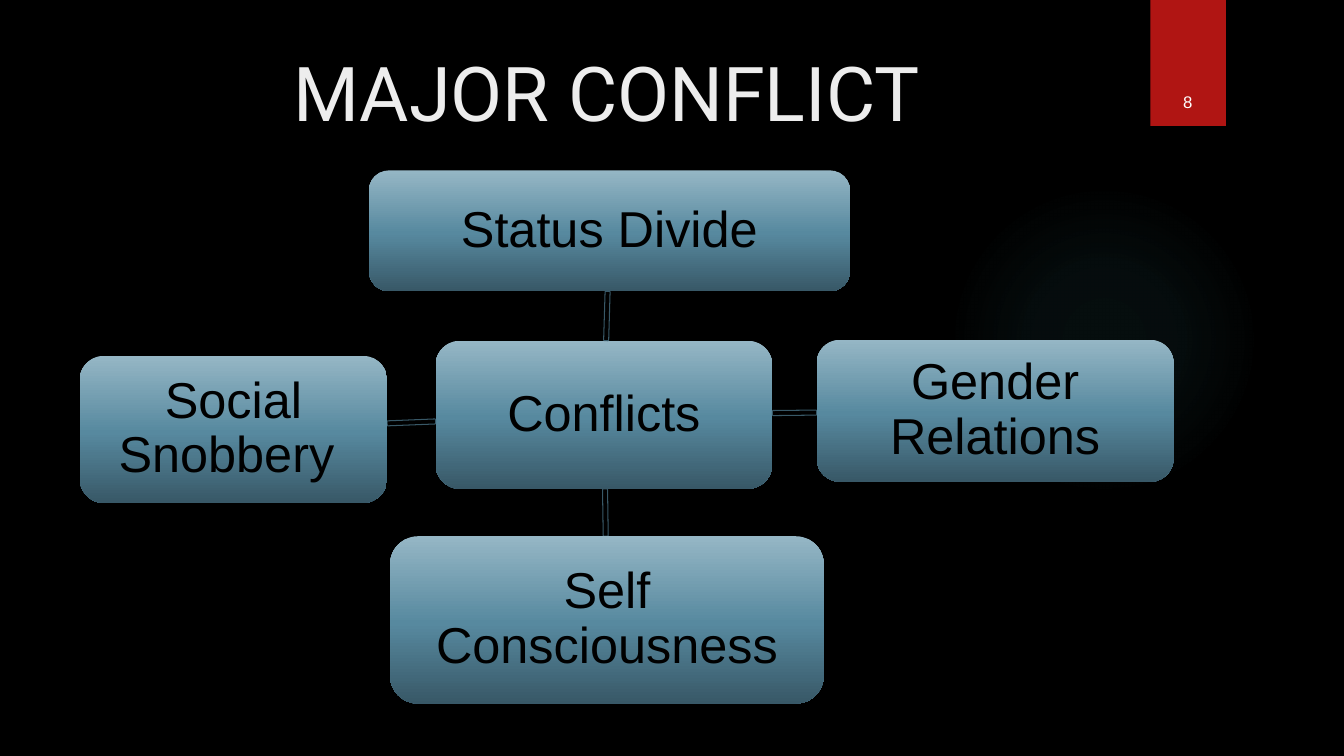
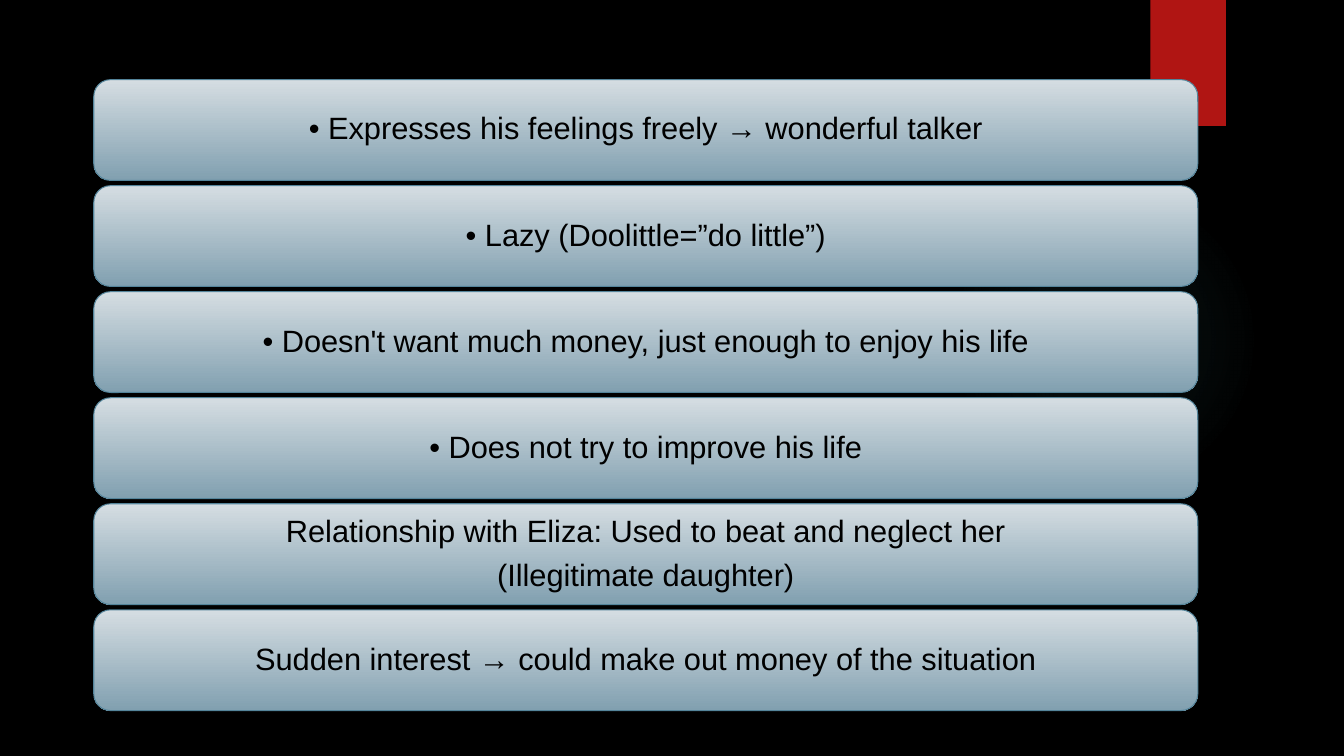
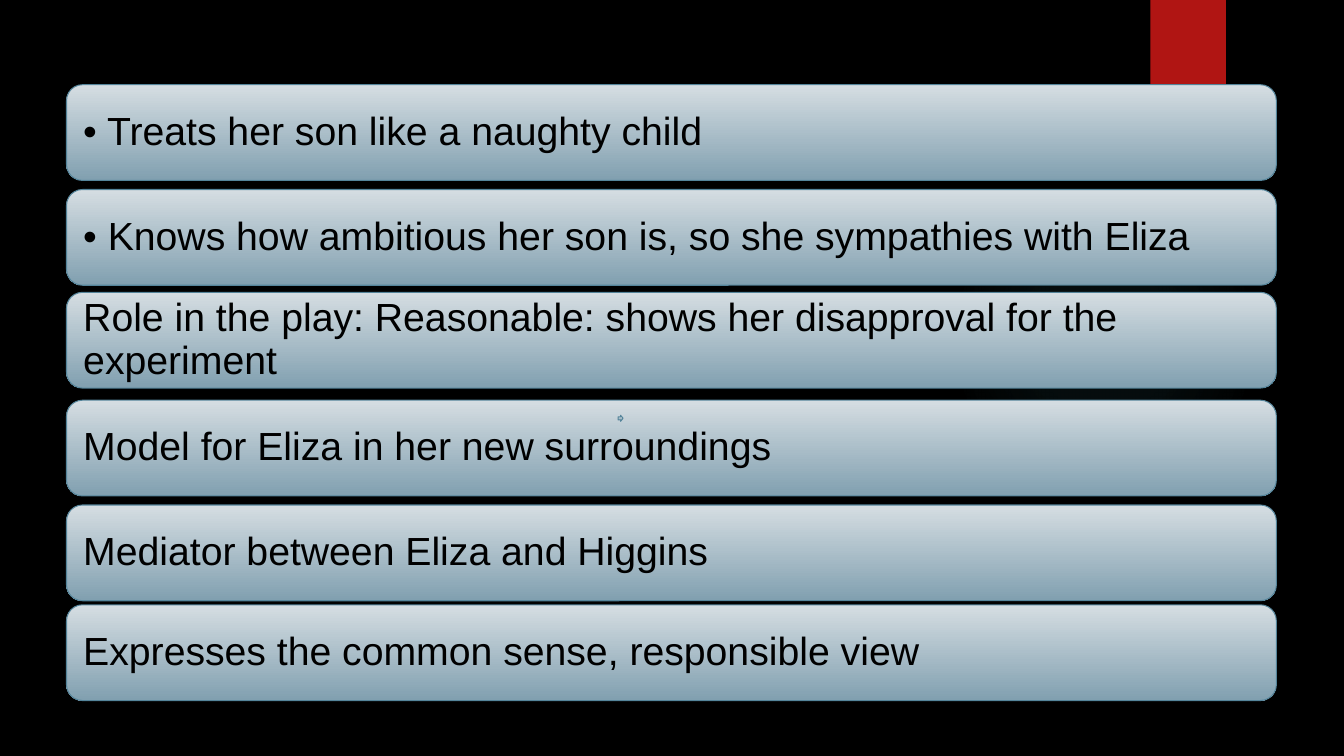
import math
import pptx
import pptx.util
import pptx.oxml
import pptx.oxml.ns
import pptx.dml.color
import pptx.enum.shapes
import pptx.enum.text

Inches, Pt = pptx.util.Inches, pptx.util.Pt
Kind = pptx.enum.shapes.MSO_SHAPE
Align = pptx.enum.text.PP_ALIGN
Anchor = pptx.enum.text.MSO_ANCHOR

THEME = {
    "back": "000000", "ink": "000000", "title": "EDEDED", "white": "FFFFFF",
    "band": "B01513", "edge": "54849A", "link": "385867",
    "glow": [(0, "50B9C1", 7), (36, "50B9C1", 6), (69, "50B9C1", 0)],
    "node": [(0, "95B6C5", 100), (52, "57899F", 100), (100, "385867", 100)],
    "bar": [(0, "D5DDE2", 100), (100, "81A0B0", 100)],
    "head": "Roboto", "body": "Arial",
    "sizes": {"title": 54, "node": 36, "wide": 28, "bar": 22, "page": 12},
}
SIZES = THEME["sizes"]

TITLE = "MAJOR CONFLICT"
PAGE = "8"
HUB = ("Conflicts", (4.32, 3.38, 3.34, 1.47))
NODES = [
    ("Status Divide", (3.66, 1.69, 4.77, 1.2)),
    ("Gender Relations", (8.1, 3.37, 3.54, 1.41)),
    ("Self Consciousness", (3.87, 5.32, 4.3, 1.66)),
    ("Social Snobbery ", (0.79, 3.53, 3.05, 1.46)),
]
FATHER = [
    ["• Expresses his feelings freely → wonderful talker"],
    ["• Lazy (Doolittle=”do little”)"],
    ["• Doesn't want much money, just enough to enjoy his life"],
    ["• Does not try to improve his life"],
    ["Relationship with Eliza: Used to beat and neglect her",
     "(Illegitimate daughter)"],
    ["Sudden interest → could make out money of the situation"],
]
MOTHER = [
    (0.84, "• Treats her son like a naughty child"),
    (1.88, "• Knows how ambitious her son is, so she sympathies with Eliza"),
    (2.9, "Role in the play: Reasonable: shows her disapproval for the experiment"),
    (3.97, "Model for Eliza in her new surroundings"),
    (5.01, "Mediator between Eliza and Higgins"),
    (6, "Expresses the common sense, responsible view"),
]


def rgb(code):
    return pptx.dml.color.RGBColor.from_string(code)


def blend(shape, stops, round_off=False):
    """Fill with a top-down gradient, or one spreading from the centre."""
    marks = "".join(
        f'<a:gs pos="{pos * 1000}"><a:srgbClr val="{code}">'
        f'<a:alpha val="{alpha * 1000}"/></a:srgbClr></a:gs>'
        for pos, code, alpha in stops)
    way = '<a:lin ang="5400000" scaled="0"/>'
    if round_off:
        way = ('<a:path path="circle"><a:fillToRect l="50000" t="50000" '
               'r="50000" b="50000"/></a:path>')
    space = pptx.oxml.ns.nsdecls("a")
    node = pptx.oxml.parse_xml(
        f"<a:gradFill {space}><a:gsLst>{marks}</a:gsLst>{way}</a:gradFill>")
    shape.element.spPr.insert(2, node)


def draw(slide, kind, box, line=None):
    shape = slide.shapes.add_shape(kind, *map(Inches, box))
    shape.shadow.inherit = False
    if line:
        shape.line.color.rgb = rgb(line)
        shape.line.width = Pt(0.75)
    else:
        shape.line.fill.background()
    return shape


def write(shape, lines, size, color="ink", face="body", align=Align.CENTER,
          inset=(0.1, 0.05), anchor=Anchor.MIDDLE, lead=0.9, after=0.35):
    frame = shape.text_frame
    side, rim = map(Inches, inset)
    look = {"word_wrap": True, "auto_size": pptx.enum.text.MSO_AUTO_SIZE.NONE,
            "vertical_anchor": anchor, "margin_left": side,
            "margin_right": side, "margin_top": rim, "margin_bottom": rim}
    for name, value in look.items():
        setattr(frame, name, value)
    frame.text = "\n".join(lines)
    style = {"alignment": align, "line_spacing": lead,
             "space_before": Pt(0), "space_after": Pt(size * after)}
    for para in frame.paragraphs:
        for name, value in style.items():
            setattr(para, name, value)
        para.font.size = Pt(size)
        para.font.name = THEME[face]
        para.font.color.rgb = rgb(THEME[color])


def dress(deck, slide):
    """Give the master its black ground, glow and red band."""
    master = deck.slide_master
    fill = master.background.fill
    fill.solid()
    fill.fore_color.rgb = rgb(THEME["back"])
    glow = draw(slide, Kind.OVAL, (9.41, 1.83, 3.08, 3.08))
    blend(glow, THEME["glow"], round_off=True)
    band = draw(slide, Kind.RECTANGLE, (11.41, 0, 0.75, 1.25))
    band.fill.solid()
    band.fill.fore_color.rgb = rgb(THEME["band"])
    for spot, part in enumerate((glow, band)):
        part.element.xpath(".//p:cNvPr")[0].set("id", str(50 + spot))
        master.shapes.element.insert(2 + spot, part.element)


def centre(box):
    left, top, wide, high = box
    return left + wide / 2, top + high / 2


def reach(box, angle):
    """Distance from the centre of a box to its edge."""
    return min(box[2] / 2 / max(abs(math.cos(angle)), 1e-6),
               box[3] / 2 / max(abs(math.sin(angle)), 1e-6))


def link(slide, start, end, thick=0.05):
    (ax, ay), (bx, by) = centre(start), centre(end)
    angle = math.atan2(by - ay, bx - ax)
    near = reach(start, angle)
    far = math.hypot(bx - ax, by - ay) - reach(end, angle)
    mid = (near + far) / 2
    x, y = ax + mid * math.cos(angle), ay + mid * math.sin(angle)
    long = far - near
    rod = draw(slide, Kind.FLOWCHART_ALTERNATE_PROCESS,
               (x - long / 2, y - thick / 2, long, thick), THEME["link"])
    rod.fill.background()
    rod.rotation = math.degrees(angle) % 360


def add_map(deck):
    slide = deck.slides.add_slide(deck.slide_layouts[5])
    dress(deck, slide)
    title = slide.shapes.title
    place = {"left": 2.81, "top": 0.42, "width": 8.92, "height": 1.08}
    for name, value in place.items():
        setattr(title, name, Inches(value))
    write(title, [TITLE], SIZES["title"], "title", "head", Align.LEFT, after=0)
    page = slide.shapes.add_textbox(*map(Inches, (11.32, 0.32, 0.92, 0.84)))
    write(page, [PAGE], SIZES["page"], "white", anchor=Anchor.BOTTOM,
          lead=0.8, after=0)
    for text, box in [HUB] + NODES:
        if box != HUB[1]:
            link(slide, HUB[1], box)
        node = draw(slide, Kind.FLOWCHART_ALTERNATE_PROCESS, box)
        blend(node, THEME["node"])
        write(node, [text], SIZES["node"], inset=(0.03, 0.03))


def add_bars(deck, rows, left, wide, high, size, align, inset):
    """Add a slide of stacked bars from (top, lines) rows."""
    slide = deck.slides.add_slide(deck.slide_layouts[6])
    for top, lines in rows:
        bar = draw(slide, Kind.ROUNDED_RECTANGLE, (left, top, wide, high),
                   THEME["edge"])
        blend(bar, THEME["bar"])
        write(bar, lines, size, align=align, inset=inset)
    return slide


def main():
    deck = pptx.Presentation()
    deck.slide_width, deck.slide_height = Inches(13.33), Inches(7.5)
    add_map(deck)
    first, pitch = 0.79, 1.052
    rows = [(first + i * pitch, lines) for i, lines in enumerate(FATHER)]
    add_bars(deck, rows, 0.93, 10.95, 1, SIZES["bar"], Align.CENTER,
             (0.09, 0.05))
    rows = [(top, [text]) for top, text in MOTHER]
    slide = add_bars(deck, rows, 0.66, 12, 0.95, SIZES["wide"], Align.LEFT,
                     (0.12, 0.05))
    arrow = draw(slide, Kind.RIGHT_ARROW, (6.13, 4.12, 0.05, 0.06),
                 THEME["edge"])
    blend(arrow, THEME["bar"])
    deck.save("out.pptx")


if __name__ == "__main__":
    main()
